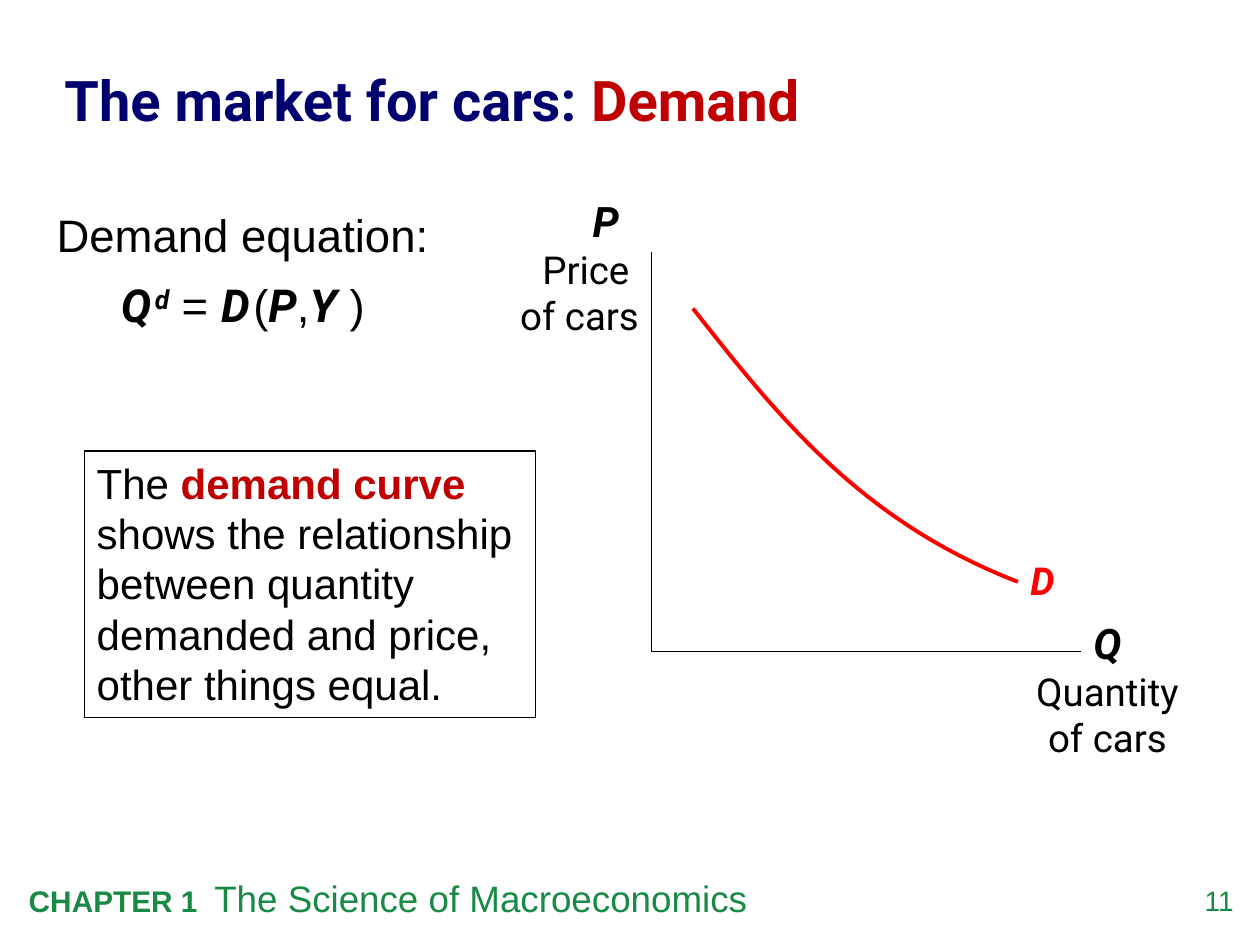
from dataclasses import dataclass

from lxml import etree
from pptx import Presentation
from pptx.dml.color import RGBColor
from pptx.enum.shapes import MSO_CONNECTOR, MSO_SHAPE
from pptx.enum.text import MSO_ANCHOR, PP_ALIGN
from pptx.oxml.ns import qn
from pptx.util import Cm, Pt

STRAIGHT = MSO_CONNECTOR.STRAIGHT
RECTANGLE = MSO_SHAPE.RECTANGLE
TOP, MIDDLE = MSO_ANCHOR.TOP, MSO_ANCHOR.MIDDLE
LEFT, CENTER, RIGHT = PP_ALIGN.LEFT, PP_ALIGN.CENTER, PP_ALIGN.RIGHT


@dataclass(frozen=True)
class Theme:
    heading: str = "Roboto"
    body: str = "Arial"
    black: str = "000000"
    white: str = "FFFFFF"
    navy: str = "00006E"
    accent: str = "C00000"
    red: str = "FF0000"
    green: str = "198A46"
    title: int = 32
    equation: int = 26
    text: int = 24
    label: int = 22
    footer: int = 21
    chapter: int = 17
    number: int = 16
    gap: int = 8
    thin: float = 0.75
    thick: float = 2.25


THEME = Theme()


def apply(target, formats):
    for name, value in formats.items():
        setattr(target, name, value)


def style(name, size, color=THEME.black, bold=False, italic=False):
    return {"name": name, "size": Pt(size), "bold": bold, "italic": italic}, color


def symbol(size, color=THEME.black):
    return style(THEME.heading, size, color, True, True)


def add_run(paragraph, text, look, baseline=0):
    formats, color = look
    for index, line in enumerate(text.split("\n")):
        if index:
            paragraph.add_line_break()
        run = paragraph.add_run()
        run.text = line
        apply(run.font, formats)
        run.font.color.rgb = RGBColor.from_string(color)
        if baseline:
            run.font._element.set("baseline", str(baseline * 1000))


def write(holder, paragraphs, paragraph_format, anchor=TOP, inset=True):
    frame = holder.text_frame
    apply(frame, {"word_wrap": True, "vertical_anchor": anchor})
    if not inset:
        apply(frame, dict.fromkeys(
            ("margin_left", "margin_right", "margin_top", "margin_bottom"), 0))
    for index, runs in enumerate(paragraphs):
        paragraph = frame.add_paragraph() if index else frame.paragraphs[0]
        apply(paragraph, paragraph_format)
        if not index:
            paragraph.space_before = Pt(0)
        for run in runs:
            add_run(paragraph, *run)


def add_text(slide, box, paragraphs, paragraph_format, **options):
    holder = slide.shapes.add_textbox(*map(Cm, box))
    write(holder, paragraphs, paragraph_format, **options)


def set_line(shape, color, width):
    shape.line.color.rgb = RGBColor.from_string(color)
    shape.line.width = Pt(width)


def add_axis(slide, start, end):
    axis = slide.shapes.add_connector(STRAIGHT, *map(Cm, start + end))
    set_line(axis, THEME.black, THEME.thin)
    etree.SubElement(axis._element.spPr, qn("a:effectLst"))


def add_curve(slide, start, controls):
    builder = slide.shapes.build_freeform(*map(Cm, start))
    builder.add_line_segments([tuple(map(Cm, point)) for point in controls], close=False)
    curve = builder.convert_to_shape()
    segments = list(curve._element.iter(qn("a:lnTo")))
    bezier = etree.Element(qn("a:cubicBezTo"))
    segments[0].addprevious(bezier)
    for segment in segments:
        bezier.append(segment[0])
        segment.getparent().remove(segment)
    curve.fill.background()
    curve.shadow.inherit = False
    set_line(curve, THEME.red, THEME.thick)


def build_title(slide, box):
    runs = [("The market for cars: ", style(THEME.heading, THEME.title, THEME.navy, True)),
            ("Demand", style(THEME.heading, THEME.title, THEME.accent, True))]
    add_text(slide, box, [runs], {"line_spacing": 1.05}, anchor=MIDDLE, inset=False)


def build_equation(slide, box):
    plain = style(THEME.body, THEME.equation)
    variable = symbol(THEME.equation)
    gap = symbol(THEME.gap)
    equation = [("Q", variable), (" ", gap), ("d", variable, 30), (" = ", plain),
                ("D", variable), (" ", gap), ("(", plain), ("P", variable),
                (",", plain), ("Y", variable), (" )", plain)]
    add_text(slide, box, [[("Demand equation:", plain)], equation],
             {"alignment": CENTER, "line_spacing": 1.05, "space_before": Pt(7.5)})


def build_definition(slide, box):
    frame = slide.shapes.add_shape(RECTANGLE, *map(Cm, box))
    frame.shadow.inherit = False
    frame.fill.solid()
    frame.fill.fore_color.rgb = RGBColor.from_string(THEME.white)
    set_line(frame, THEME.black, THEME.thin)
    plain = style(THEME.body, THEME.text)
    runs = [("The ", plain),
            ("demand curve", style(THEME.body, THEME.text, THEME.accent, True)),
            (" shows the relationship between quantity demanded and price, "
             "other things equal.", plain)]
    write(frame, [runs], {"alignment": LEFT})


def build_graph(slide, box):
    left, top, width, height = box

    def at(x, y):
        return left + x, top + y

    origin = at(0, height)
    add_axis(slide, at(0, 0), origin)
    add_axis(slide, origin, at(width, height))

    caption = style(THEME.heading, THEME.label)
    axis_name = symbol(THEME.text)
    labels = [
        (at(7.39, 7.24) + (3.61, 3.12), CENTER,
         [("Q", axis_name), (" Quantity of cars", caption)]),
        (at(-3.17, -1.27) + (3.17, 3.17), RIGHT,
         [("P ", axis_name), (" \nPrice \nof cars", caption)]),
        (at(7.39, 6.02) + (1.27, 1.19), LEFT,
         [("D", symbol(THEME.label, THEME.red))]),
    ]
    for label_box, alignment, runs in labels:
        add_text(slide, label_box, [runs], {"alignment": alignment})
    add_curve(slide, at(0.84, 1.14), [at(2.52, 3.27), at(4.19, 5.41), at(7.39, 6.65)])


def build_footer(slide, box):
    left, top, width, height = box
    runs = [("CHAPTER 1  ", style(THEME.body, THEME.chapter, THEME.green, True)),
            ("The Science of Macroeconomics", style(THEME.body, THEME.footer, THEME.green))]
    add_text(slide, (left, top, 20.78, height), [runs], {"alignment": LEFT})
    number_width = 1.4
    add_text(slide, (left + width - number_width, top + 0.28, number_width, 0.81),
             [[("11", style(THEME.body, THEME.number, THEME.green))]],
             {"alignment": RIGHT}, inset=False)


def main():
    deck = Presentation()
    apply(deck, {"slide_width": Cm(25.4), "slide_height": Cm(19.05)})
    slide = deck.slides.add_slide(deck.slide_layouts[6])
    build_footer(slide, (0.33, 17.53, 24.54, 1.14))
    build_title(slide, (1.3, 0.66, 22.91, 2.62))
    build_graph(slide, (13.13, 5.08, 8.66, 8.05))
    build_definition(slide, (1.7, 9.09, 9.09, 5.38))
    build_equation(slide, (0.64, 3.99, 8.51, 2.84))
    deck.save("out.pptx")


if __name__ == "__main__":
    main()
